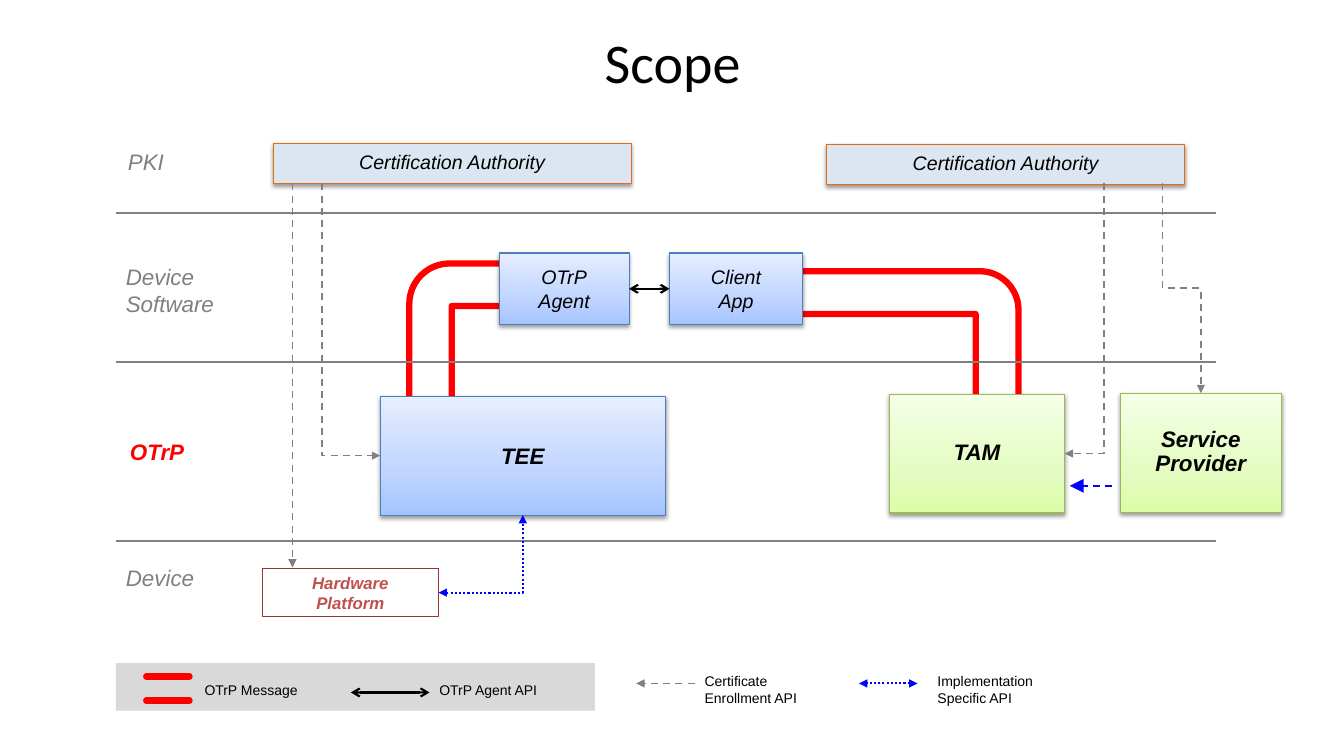
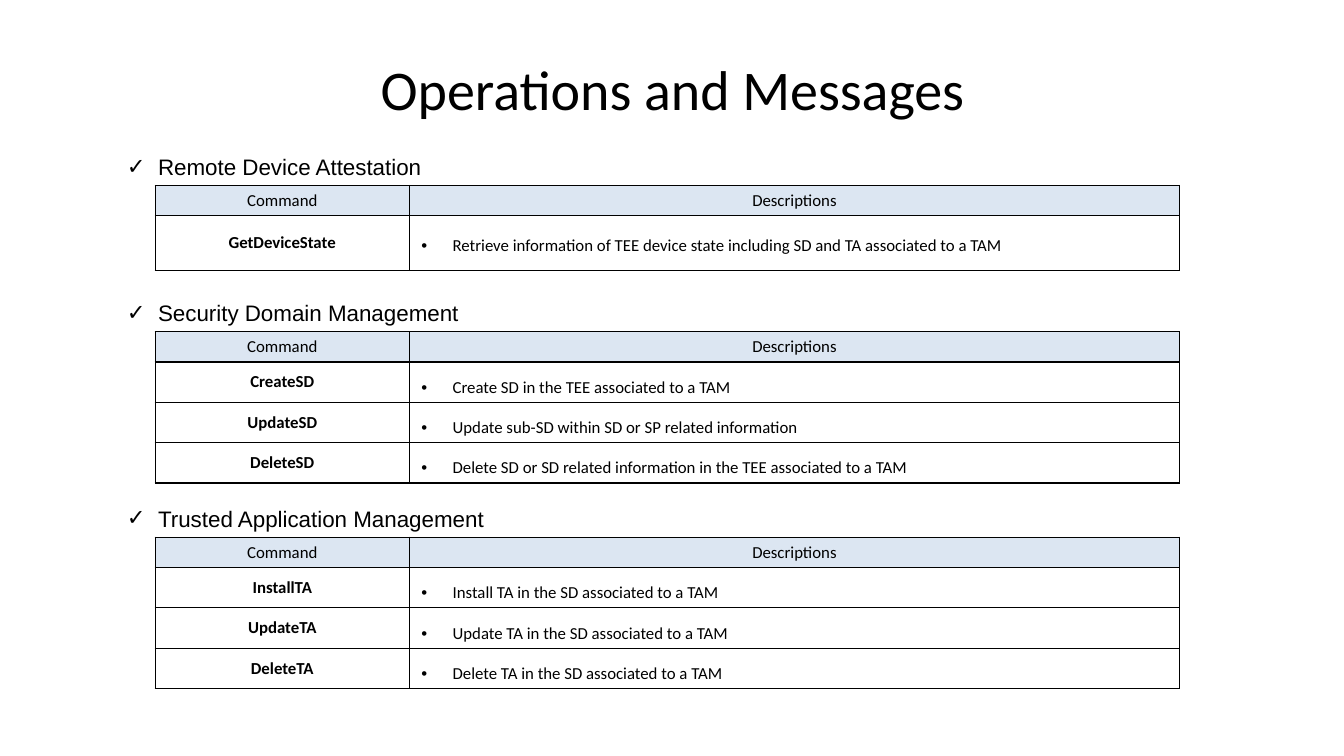
from lxml import etree
from pptx import Presentation, util as u
from pptx.dml.color import RGBColor
from pptx.enum import dml, shapes, text
from pptx.oxml.ns import qn

BLACK = RGBColor(0x00, 0x00, 0x00)
GRAY = RGBColor(0x80, 0x80, 0x80)
LEGEND_GRAY = RGBColor(0xD9, 0xD9, 0xD9)
RED = RGBColor(0xFF, 0x00, 0x00)
BLUE = RGBColor(0x00, 0x00, 0xFF)
PALE_BLUE = RGBColor(0xDC, 0xE6, 0xF2)
ORANGE = RGBColor(0xE4, 0x6C, 0x0A)
STEEL = RGBColor(0x4B, 0x7E, 0xBC)
OLIVE = RGBColor(0x98, 0xB9, 0x55)
MAROON = RGBColor(0x95, 0x37, 0x35)
BRICK = RGBColor(0xC0, 0x50, 0x4D)
BLUE_STOPS = ((0, "A4C4FF"), (35, "BFD4FF"), (100, "E6EEFF"))
GREEN_STOPS = ((0, "DAFDA7"), (35, "E4FCC2"), (100, "F5FFE7"))
TOP, LEFT, BOTTOM, RIGHT = range(4)
DASH, DOTS = dml.MSO_LINE.DASH, dml.MSO_LINE.ROUND_DOT

# Scope diagram: lanes, boxes and legend
LANE_LEFT, LANE_RIGHT = 1.15, 12.06
LANE_LINES = (2.11, 3.59, 5.37)
LANE_LABELS = [  # left, top, width, height, lines, color, bold
    (1.17, 1.42, 0.62, 0.37, ["PKI"], GRAY, False),
    (1.15, 2.56, 1.14, 0.64, ["Device", "Software"], GRAY, False),
    (1.19, 4.3, 0.79, 0.37, ["OTrP"], RED, True),
    (1.15, 5.55, 0.89, 0.37, ["Device"], GRAY, False),
]
BOX_STYLES = {  # fill, line, font color, size, bold, line spacing
    "authority": (PALE_BLUE, ORANGE, BLACK, 14, False, 0.9),
    "software": (BLUE_STOPS, STEEL, BLACK, 14, False, None),
    "tee": (BLUE_STOPS, STEEL, BLACK, 16, True, None),
    "server": (GREEN_STOPS, OLIVE, BLACK, 16, True, 0.9),
    "hardware": (None, MAROON, BRICK, 12, True, None),
}
BOXES = {  # style, position, lines
    "device CA": ("authority", (2.71, 1.42, 3.55, 0.4), ["Certification Authority"]),
    "server CA": ("authority", (8.2, 1.43, 3.55, 0.4), ["Certification Authority"]),
    "tee": ("tee", (3.77, 3.93, 2.83, 1.18), ["TEE"]),
    "hardware": ("hardware", (2.6, 5.64, 1.75, 0.48), ["Hardware Platform"]),
    "tam": ("server", (8.82, 3.91, 1.74, 1.18), ["TAM"]),
    "agent": ("software", (4.95, 2.51, 1.29, 0.71), ["OTrP", "Agent"]),
    "client": ("software", (6.64, 2.51, 1.32, 0.71), ["Client App"]),
    "provider": ("server", (11.11, 3.9, 1.6, 1.18), ["Service Provider"]),
}
MESSAGE_ARROWS = [  # position, rotation, adjustments
    ((8.28, 2.18, 1.35, 2.37), 90, (0.315, 0.186, 0.068, 0.285)),
    ((4.06, 2.57, 2.13, 1.42), 0, (0.297, 0.179, 0.134, 0.282)),
]
LEGEND_TEXTS = [
    (1.93, 6.71, 1.55, 0.27, "OTrP Message"),
    (4.26, 6.71, 1.83, 0.27, "OTrP Agent API"),
    (6.89, 6.62, 1.44, 0.44, "Certificate Enrollment API"),
    (9.2, 6.62, 1.53, 0.44, "Implementation Specific API"),
]

# Operations: heading, table top, first-column and description pairs
TABLE_HEADER = ("Command", "Descriptions")
COLUMNS = (2.52, 7.64)
OPERATIONS = [
    ("Remote Device Attestation", 1.84, 3.13, 0.54, 0.1, [
        ("GetDeviceState", "Retrieve information of TEE device state including "
                           "SD and TA associated to a TAM")]),
    ("Security Domain Management", 3.29, 3.53, 0.4, 0.05, [
        ("CreateSD", "Create SD in the TEE associated to a TAM"),
        ("UpdateSD", "Update sub-SD within SD or SP related information"),
        ("DeleteSD", "Delete SD or SD related information in the TEE associated to a TAM")]),
    ("Trusted Application Management", 5.33, 3.78, 0.4, 0.05, [
        ("InstallTA", "Install TA in the SD associated to a TAM"),
        ("UpdateTA", "Update TA in the SD associated to a TAM"),
        ("DeleteTA", "Delete TA in the SD associated to a TAM")]),
]


# Shared helpers
def inches(*lengths):
    return [u.Inches(length) for length in lengths]


def child(parent, tag, **attributes):
    return etree.SubElement(parent, qn(tag), {k: str(v) for k, v in attributes.items()})


def write(frame, lines, size, color=BLACK, font="Arial", bold=False, italic=False,
          align=None, spacing=None):
    for index, line in enumerate(lines):
        paragraph = frame.add_paragraph() if index else frame.paragraphs[0]
        paragraph.alignment = align
        paragraph.line_spacing = spacing
        run = paragraph.add_run()
        run.text = line
        run.font.name, run.font.size = font, u.Pt(size)
        run.font.bold, run.font.italic = bold, italic
        run.font.color.rgb = color


def add_bullet(paragraph, character):
    properties = paragraph._p.get_or_add_pPr()
    properties.set("marL", str(u.Inches(0.31)))
    properties.set("indent", str(-u.Inches(0.31)))
    child(properties, "a:buFont", typeface="Arial")
    child(properties, "a:buChar", char=character)


def add_slide(presentation, title, height):
    slide = presentation.slides.add_slide(presentation.slide_layouts[5])
    shape = slide.shapes.title
    shape.left, shape.top, shape.width, shape.height = inches(0.67, 0, 12, height)
    shape.text_frame.vertical_anchor = text.MSO_ANCHOR.MIDDLE
    write(shape.text_frame, [title], 40, font="Calibri", align=text.PP_ALIGN.CENTER)
    return slide


def add_text(slide, position, lines, size, wrap=True, **style):
    frame = slide.shapes.add_textbox(*inches(*position)).text_frame
    frame.word_wrap = wrap
    frame.auto_size = text.MSO_AUTO_SIZE.SHAPE_TO_FIT_TEXT
    write(frame, lines, size, **style)
    return frame


def add_shape(slide, kind, position, fill=None, line=None, width=0.75):
    shape = slide.shapes.add_shape(kind, *inches(*position))
    shape.shadow.inherit = False
    if isinstance(fill, tuple) and not isinstance(fill, RGBColor):
        shape.fill.gradient()
        shape.fill.gradient_angle = 90
        stops = shape._element.spPr.find(qn("a:gradFill")).find(qn("a:gsLst"))
        for stop in list(stops):
            stops.remove(stop)
        for share, color in fill:
            child(child(stops, "a:gs", pos=share * 1000), "a:srgbClr", val=color)
    elif fill is not None:
        shape.fill.solid()
        shape.fill.fore_color.rgb = fill
    else:
        shape.fill.background()
    if line is None:
        shape.line.fill.background()
    else:
        shape.line.color.rgb = line
        shape.line.width = u.Pt(width)
    return shape


def add_box(slide, style, position, lines):
    fill, line, color, size, bold, spacing = BOX_STYLES[style]
    box = add_shape(slide, shapes.MSO_SHAPE.RECTANGLE, position, fill, line)
    if fill is not None:
        effects = box._element.spPr.find(qn("a:effectLst"))
        shadow = child(effects, "a:outerShdw", blurRad=u.Pt(3.1), dist=u.Pt(1.6),
                       dir=5400000, rotWithShape=0)
        child(child(shadow, "a:srgbClr", val="000000"), "a:alpha", val=38000)
    frame = box.text_frame
    frame.word_wrap = True
    frame.vertical_anchor = text.MSO_ANCHOR.MIDDLE
    frame.margin_left = frame.margin_right = u.Inches(0.31)
    frame.margin_top = frame.margin_bottom = u.Inches(0.29)
    write(frame, lines, size, color, bold=bold, italic=True,
          align=text.PP_ALIGN.CENTER, spacing=spacing)
    return box


def add_line(slide, start, end, color, width, dash=None, head=None, tail=None,
             arrow_size="med", cap=None):
    line = slide.shapes.add_connector(shapes.MSO_CONNECTOR.STRAIGHT, *inches(*start, *end))
    line.line.color.rgb = color
    line.line.width = u.Pt(width)
    if dash is not None:
        line.line.dash_style = dash
    outline = line.line._get_or_add_ln()
    if cap:
        outline.set("cap", cap)
    for tag, arrow in (("a:headEnd", head), ("a:tailEnd", tail)):
        if arrow:
            child(outline, tag, type=arrow, w=arrow_size, len=arrow_size)
    child(line._element.spPr, "a:effectLst")
    return line


def add_bent(slide, start, end, preset, rotation, flip, **style):
    """Elbow connector whose frame is centred between its ends."""
    line = add_line(slide, start, end, **style)
    width, height = abs(end[0] - start[0]), abs(end[1] - start[1])
    if rotation % 180:
        width, height = height, width
    center_x, center_y = (start[0] + end[0]) / 2, (start[1] + end[1]) / 2
    line.left, line.top, line.width, line.height = inches(
        center_x - width / 2, center_y - height / 2, width, height)
    frame = line._element.spPr.find(qn("a:xfrm"))
    for name in ("flipH", "flipV"):
        frame.set(name, str(int(name == flip)))
    frame.set("rot", str(rotation * 60000))
    line._element.spPr.find(qn("a:prstGeom")).set("prst", preset)


def side(name, which):
    left, top, width, height = BOXES[name][1]
    shares = {TOP: (0.5, 0), LEFT: (0, 0.5), BOTTOM: (0.5, 1), RIGHT: (1, 0.5)}
    across, down = shares[which]
    return left + across * width, top + down * height


def build_scope(presentation):
    slide = add_slide(presentation, "Scope", 1.21)
    enrollment = dict(color=GRAY, width=1.25, dash=DASH, tail="triangle")
    specific = dict(color=BLUE, width=1.5, dash=DOTS, head="triangle", tail="triangle")
    agent_api = dict(color=BLACK, width=1.5, head="arrow", tail="arrow")

    # Message paths and lanes
    add_shape(slide, shapes.MSO_SHAPE.RECTANGLE, (LANE_LEFT, 6.58, 4.75, 0.47), LEGEND_GRAY)
    for position, rotation, adjustments in MESSAGE_ARROWS:
        arrow = add_shape(slide, shapes.MSO_SHAPE.BENT_ARROW, position, None, RED, 4.5)
        arrow.rotation = rotation
        for index, value in enumerate(adjustments):
            arrow.adjustments[index] = value
    for *position, lines, color, bold in LANE_LABELS:
        add_text(slide, position, lines, 16, wrap=False, color=color, bold=bold, italic=True)
    for y in LANE_LINES:
        add_line(slide, (LANE_LEFT, y), (LANE_RIGHT, y), GRAY, 1.25)

    # Boxes and their connections
    boxes = {name: add_box(slide, *box) for name, box in BOXES.items()}
    api = add_line(slide, side("agent", RIGHT), side("client", LEFT), **agent_api)
    api.begin_connect(boxes["agent"], RIGHT)
    api.end_connect(boxes["client"], LEFT)
    add_line(slide, (2.9, 1.82), (2.9, 5.63), **enrollment)
    for start, end, preset, rotation, flip, style in [
        ((3.19, 1.82), side("tee", LEFT), "bentConnector2", 270, "flipH", enrollment),
        ((10.95, 1.82), side("tam", RIGHT), "bentConnector2", 90, None, enrollment),
        ((11.53, 1.82), side("provider", TOP), "bentConnector3", 270, "flipH", enrollment),
        (side("hardware", RIGHT), side("tee", BOTTOM), "bentConnector2", 0, "flipV", specific),
    ]:
        add_bent(slide, start, end, preset, rotation, flip, **style)
    add_line(slide, (11.03, 4.82), (10.61, 4.82), BLUE, 1.25, DASH,
             tail="triangle", arrow_size="lg")

    # Legend
    for y in (6.71, 6.95):
        add_line(slide, (1.88, y), (1.45, y), RED, 4.5, cap="rnd")
    add_line(slide, (3.48, 6.87), (4.26, 6.87), **agent_api)
    add_line(slide, (6.89, 6.78), (6.31, 6.78), **enrollment)
    add_line(slide, (9.1, 6.78), (8.52, 6.78), **specific)
    for *position, label in LEGEND_TEXTS:
        add_text(slide, position, [label], 10)


def fill_cell(cell, label, header, first, bottom):
    cell.vertical_anchor = text.MSO_ANCHOR.MIDDLE
    cell.margin_left = cell.margin_right = u.Inches(0.12)
    cell.margin_top, cell.margin_bottom = inches(0.05, bottom)
    for tag in ("a:lnL", "a:lnR", "a:lnT", "a:lnB"):
        border = child(cell._tc.get_or_add_tcPr(), tag, w=u.Pt(1))
        child(child(border, "a:solidFill"), "a:srgbClr", val=BLACK)
    if header:
        cell.fill.solid()
        cell.fill.fore_color.rgb = PALE_BLUE
    else:
        cell.fill.background()
    listed = not header and not first
    write(cell.text_frame, [label], 12, font="Calibri", bold=first and not header,
          align=None if listed else text.PP_ALIGN.CENTER, spacing=1.5 if listed else None)
    if listed:
        add_bullet(cell.text_frame.paragraphs[0], "•")


def build_operations(presentation):
    slide = add_slide(presentation, "Operations and Messages", 1.75)
    for heading, top, width, row_height, bottom, commands in OPERATIONS:
        frame = add_text(slide, (1.16, top - 0.37, width, 0.37), [heading], 16, wrap=False)
        add_bullet(frame.paragraphs[0], "✓")
        rows = [TABLE_HEADER] + commands
        table = slide.shapes.add_table(len(rows), 2, *inches(
            1.54, top, sum(COLUMNS), 0.3 + row_height * len(commands))).table
        table.first_row = table.horz_banding = False
        for column, column_width in zip(table.columns, COLUMNS):
            column.width = u.Inches(column_width)
        for r, labels in enumerate(rows):
            table.rows[r].height = u.Inches(row_height if r else 0.3)
            for c, label in enumerate(labels):
                fill_cell(table.cell(r, c), label, r == 0, c == 0,
                          bottom if r and c else 0.05)


def main():
    presentation = Presentation()
    presentation.slide_width, presentation.slide_height = inches(13.33, 7.5)
    build_scope(presentation)
    build_operations(presentation)
    presentation.save("out.pptx")


if __name__ == "__main__":
    main()
